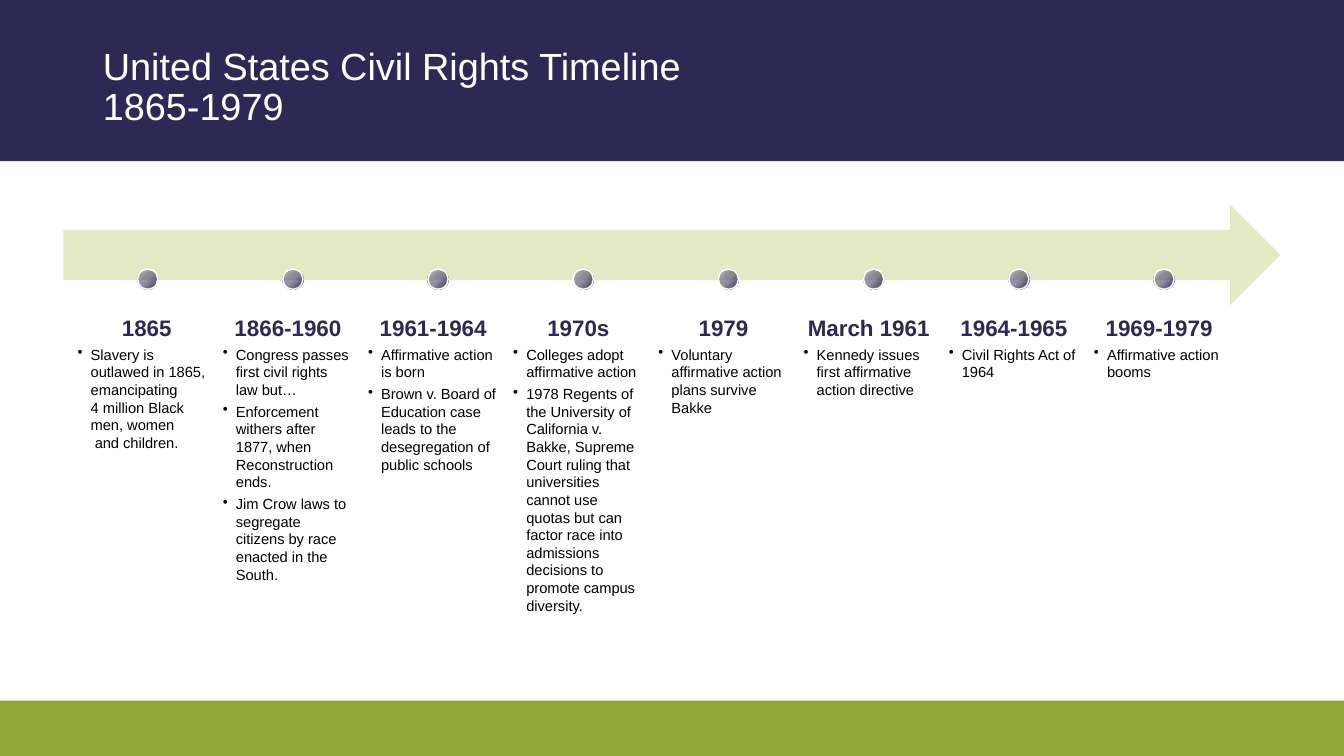
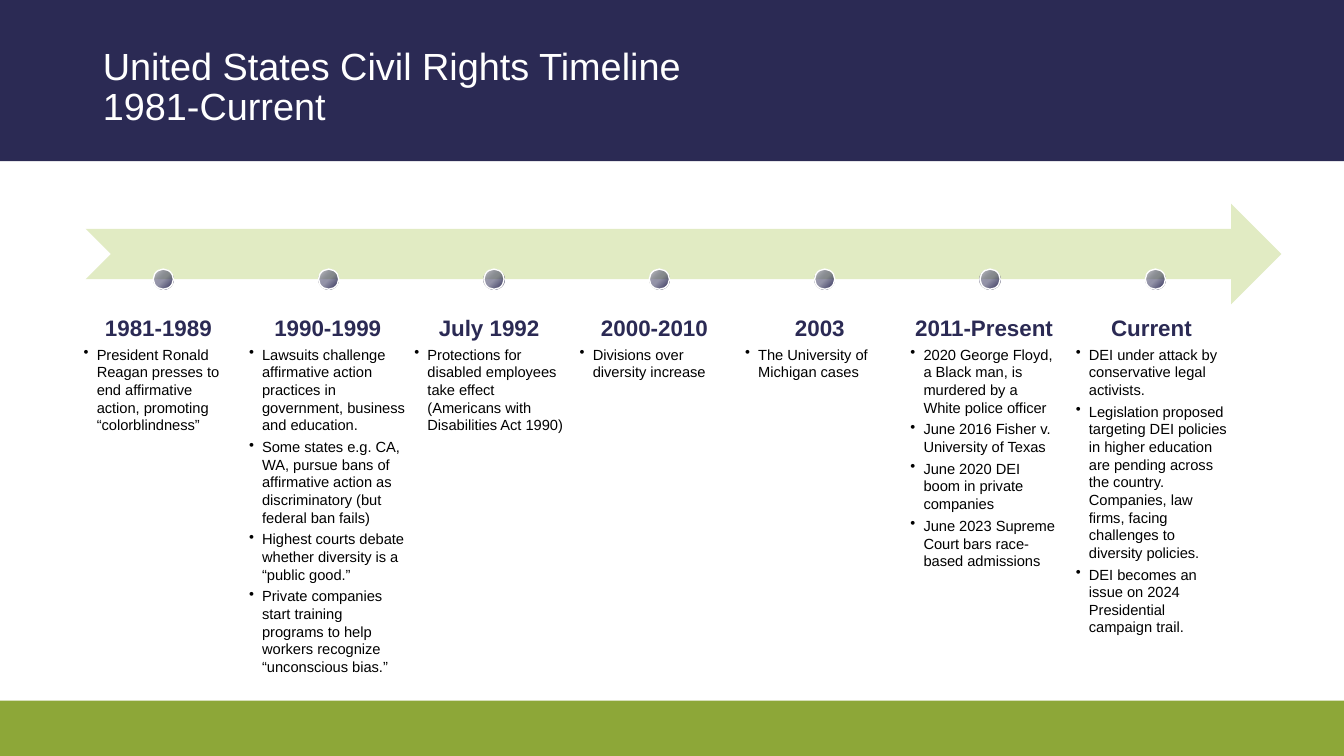
from pptx import Presentation
from pptx.dml.color import RGBColor
from pptx.enum.shapes import MSO_SHAPE
from pptx.enum.text import MSO_ANCHOR, MSO_AUTO_SIZE, PP_ALIGN
from pptx.oxml import parse_xml
from pptx.oxml.ns import nsdecls, qn
from pptx.util import Inches, Pt

NAVY = RGBColor(0x2B, 0x2A, 0x54)
GREEN = RGBColor(0x8D, 0xA7, 0x38)
PALE_GREEN = RGBColor(0xE1, 0xEB, 0xC3)
WHITE = RGBColor(0xFF, 0xFF, 0xFF)
BLACK = RGBColor(0x00, 0x00, 0x00)
FONT = "Arial"
DOT_SIZE = 0.2
BULLET_INDENT = Inches(0.13)

TITLE_STYLE = f"""<a:lvl1pPr {nsdecls('a')} algn="l">
  <a:lnSpc><a:spcPct val="90000"/></a:lnSpc>
  <a:defRPr sz="2700"><a:solidFill><a:srgbClr val="{WHITE}"/></a:solidFill>
  <a:latin typeface="{FONT}"/></a:defRPr></a:lvl1pPr>"""
DOT_FILL = f"""<a:gradFill {nsdecls('a')} rotWithShape="1"><a:gsLst>
  <a:gs pos="0"><a:srgbClr val="{NAVY}"/></a:gs>
  <a:gs pos="50000"><a:srgbClr val="{NAVY}"><a:alpha val="50000"/></a:srgbClr></a:gs>
  <a:gs pos="100000"><a:srgbClr val="E3E3E6"/></a:gs></a:gsLst>
  <a:path path="circle"><a:fillToRect l="100000" t="100000"/></a:path></a:gradFill>"""

# Each column: date, right inset, bullets
TIMELINES = [
    {
        "title": ["United States Civil Rights Timeline", "1865-1979"],
        "arrow": (MSO_SHAPE.RIGHT_ARROW, 0.63, 2.03, 12.07),
        "left": 0.77, "pitch": 1.44, "width": 1.39,
        "columns": [
            ("1865", 0.02, [
                "Slavery is outlawed in 1865, emancipating \n"
                "4 million Black men, women\n and children."]),
            ("1866-1960", 0.1, [
                "Congress passes first civil rights law but…",
                "Enforcement withers after 1877, when Reconstruction ends.",
                "Jim Crow laws to segregate citizens by race enacted in the South."]),
            ("1961-1964", 0.1, [
                "Affirmative action is born",
                "Brown v. Board of Education case leads to the desegregation of "
                "public schools"]),
            ("1970s", 0.1, [
                "Colleges adopt affirmative action",
                "1978 Regents of the University of California v. Bakke, Supreme "
                "Court ruling that universities cannot use quotas but can factor "
                "race into admissions decisions to promote campus diversity."]),
            ("1979", 0.1, ["Voluntary affirmative action plans survive Bakke"]),
            ("March 1961", 0.1, ["Kennedy issues first affirmative action directive"]),
            ("1964-1965", 0.1, ["Civil Rights Act of 1964"]),
            ("1969-1979", 0.1, ["Affirmative action booms"]),
        ],
    },
    {
        "title": ["United States Civil Rights Timeline", "1981-Current"],
        "arrow": (MSO_SHAPE.NOTCHED_RIGHT_ARROW, 0.85, 2.02, 11.86),
        "left": 0.83, "pitch": 1.64, "width": 1.58,
        "columns": [
            ("1981-1989", 0.1, [
                "President Ronald Reagan presses to end affirmative action, "
                "promoting “colorblindness”"]),
            ("1990-1999", 0.02, [
                "Lawsuits challenge affirmative action practices in government, "
                "business and education.",
                "Some states e.g. CA, WA, pursue bans of affirmative action as "
                "discriminatory (but federal ban fails)",
                "Highest courts debate whether diversity is a “public good.”",
                "Private companies start training programs to help workers "
                "recognize “unconscious bias.”"]),
            ("July 1992", 0.1, [
                "Protections for disabled employees take effect (Americans with "
                "Disabilities Act 1990)"]),
            ("2000-2010", 0.1, ["Divisions over diversity increase"]),
            ("2003", 0.1, ["The University of Michigan cases"]),
            ("2011-Present", 0.12, [
                "2020 George Floyd, a Black man, is murdered by a White police officer",
                "June 2016 Fisher v. University of Texas",
                "June 2020 DEI boom in private companies",
                "June 2023 Supreme Court bars race-based admissions"]),
            ("Current", 0.08, [
                "DEI under attack by conservative legal activists.",
                "Legislation proposed targeting DEI policies in higher education "
                "are pending across the country. Companies, law firms, facing "
                "challenges to diversity policies.",
                "DEI becomes an issue on 2024 Presidential campaign trail."]),
        ],
    },
]


def add_filled_shape(slide, kind, left, top, width, height, color):
    shape = slide.shapes.add_shape(
        kind, Inches(left), Inches(top), Inches(width), Inches(height))
    shape.shadow.inherit = False
    shape.fill.solid()
    shape.fill.fore_color.rgb = color
    shape.line.fill.background()
    return shape


def add_lines(paragraph, lines, size=None, color=None, bold=None):
    for number, line in enumerate(lines):
        if number:
            paragraph.add_line_break()
        run = paragraph.add_run()
        run.text = line
        if size:
            run.font.name = FONT
            run.font.size = Pt(size)
            run.font.bold = bold
            run.font.color.rgb = color


presentation = Presentation()
presentation.slide_width = Inches(13.33)
presentation.slide_height = Inches(7.5)
layout = presentation.slide_layouts.get_by_name("Title Only")

# Shared title style
layout_title = layout.placeholders[0]
for placeholder in list(layout.placeholders)[1:]:
    placeholder.element.getparent().remove(placeholder.element)
layout_title.left, layout_title.top = Inches(0.92), Inches(0.15)
layout_title.width, layout_title.height = Inches(11.5), Inches(1.45)
layout_title.text_frame.vertical_anchor = MSO_ANCHOR.MIDDLE
layout_title.text_frame.auto_size = MSO_AUTO_SIZE.NONE
layout_title.element.txBody.find(qn("a:lstStyle")).append(parse_xml(TITLE_STYLE))

slides = [presentation.slides.add_slide(layout) for _ in TIMELINES]

# Shared bands: drawn once, then moved to the layout behind the title
bands = [
    add_filled_shape(slides[0], MSO_SHAPE.RECTANGLE, 0, top, 13.33, height, color)
    for top, height, color in [(6.95, 0.55, GREEN), (0, 1.6, NAVY)]
]
for band in bands:
    layout_title.element.addprevious(band.element)

for slide, timeline in zip(slides, TIMELINES):
    add_lines(slide.shapes.title.text_frame.paragraphs[0], timeline["title"])

    # Timeline arrow
    kind, left, top, width = timeline["arrow"]
    add_filled_shape(slide, kind, left, top, width, 1, PALE_GREEN)

    column_width = timeline["width"]
    for index, (date, inset, bullets) in enumerate(timeline["columns"]):
        left = timeline["left"] + index * timeline["pitch"]

        # Date and events
        text_box = slide.shapes.add_textbox(
            Inches(left), Inches(3.12), Inches(column_width), Inches(3))
        text_frame = text_box.text_frame
        text_frame.word_wrap = True
        text_frame.margin_left = text_frame.margin_top = 0
        text_frame.margin_right = Inches(inset)
        text_frame.margin_bottom = Inches(0.12)
        paragraph = text_frame.paragraphs[0]
        paragraph.alignment = PP_ALIGN.CENTER
        paragraph.space_after = Pt(3)
        add_lines(paragraph, [date], 16, NAVY, True)
        for bullet in bullets:
            paragraph = text_frame.add_paragraph()
            paragraph.space_after = Pt(3)
            properties = paragraph._p.get_or_add_pPr()
            properties.set("marL", str(BULLET_INDENT))
            properties.set("indent", str(-BULLET_INDENT))
            properties.append(parse_xml(f'<a:buChar {nsdecls("a")} char="•"/>'))
            add_lines(paragraph, bullet.split("\n"), 10.5, BLACK, False)

        # Marker centred over the column
        dot = add_filled_shape(
            slide, MSO_SHAPE.OVAL, left + (column_width - DOT_SIZE) / 2, 2.67,
            DOT_SIZE, DOT_SIZE, NAVY)
        solid_fill = dot.element.spPr.find(qn("a:solidFill"))
        dot.element.spPr.replace(solid_fill, parse_xml(DOT_FILL))
        dot.line.color.rgb = WHITE
        dot.line.width = Pt(1)

presentation.save("out.pptx")
